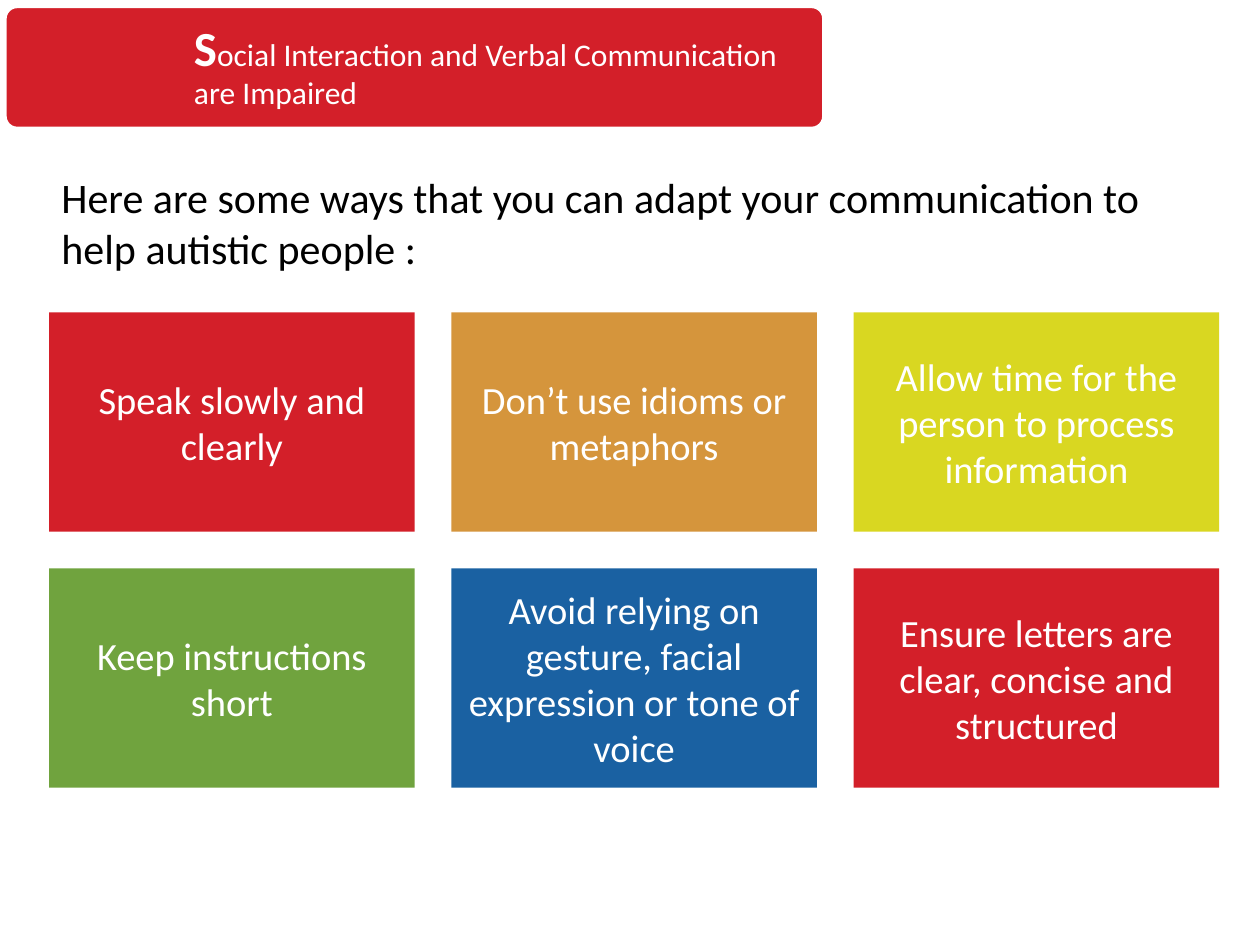
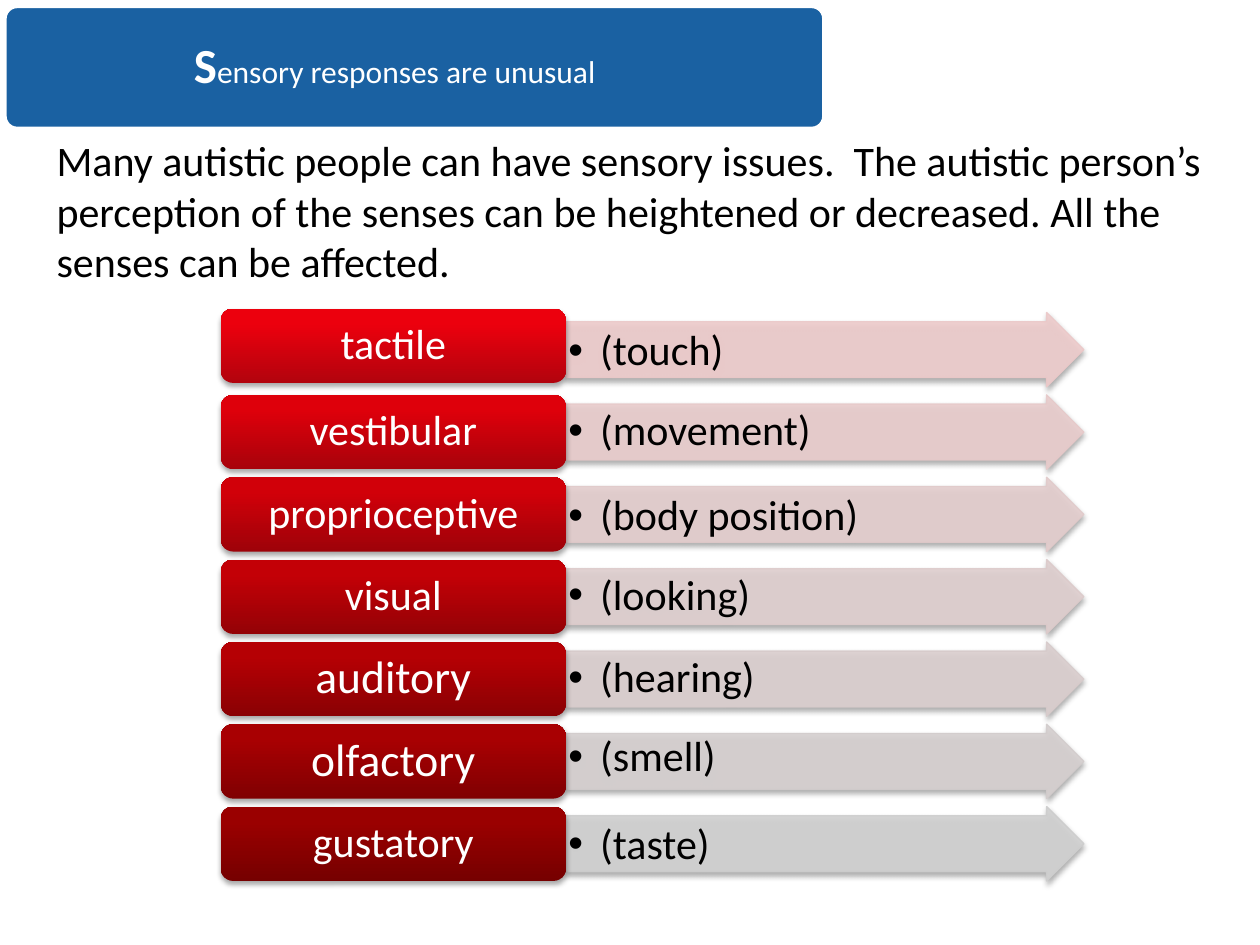
from lxml import etree
from pptx import Presentation
from pptx.dml.color import RGBColor
from pptx.enum.shapes import MSO_SHAPE
from pptx.enum.text import MSO_ANCHOR, MSO_AUTO_SIZE, PP_ALIGN
from pptx.oxml.ns import qn
from pptx.util import Cm, Pt

RECT, ROUND, ARROW = MSO_SHAPE.RECTANGLE, MSO_SHAPE.ROUNDED_RECTANGLE, MSO_SHAPE.RIGHT_ARROW
TOP, MIDDLE = MSO_ANCHOR.TOP, MSO_ANCHOR.MIDDLE
LEFT, CENTER = PP_ALIGN.LEFT, PP_ALIGN.CENTER
NO_FIT = MSO_AUTO_SIZE.NONE

FONT = "Calibri"
WHITE = RGBColor(0xFF, 0xFF, 0xFF)
BLACK = RGBColor(0x00, 0x00, 0x00)
RED = RGBColor(0xD3, 0x1F, 0x29)
ORANGE = RGBColor(0xD5, 0x95, 0x3C)
YELLOW = RGBColor(0xD9, 0xD7, 0x21)
GREEN = RGBColor(0x70, 0xA3, 0x3E)
BLUE = RGBColor(0x1A, 0x61, 0xA2)
LABEL_LOW = RGBColor(0xB2, 0x03, 0x0D), RGBColor(0x76, 0x00, 0x00)
LABEL_HIGH = RGBColor(0xEC, 0x00, 0x0D), RGBColor(0x9A, 0x00, 0x00)
ARROW_FILL = RGBColor(0xEF, 0xCD, 0xCD), RGBColor(0xD2, 0xD2, 0xD2)
ARROW_LINE = RGBColor(0xEB, 0xC8, 0xC8), RGBColor(0xCD, 0xCD, 0xCD)

TIPS = [
    ("Speak slowly and clearly", RED),
    ("Don’t use idioms or metaphors", ORANGE),
    ("Allow time for the person to process information", YELLOW),
    ("Keep instructions short", GREEN),
    ("Avoid relying on gesture, facial expression or tone of voice", BLUE),
    ("Ensure letters are clear, concise and structured", RED),
]
SENSES = [
    ("tactile", 24, "(touch)", 0.16),
    ("vestibular", 24, "(movement)", 0.11),
    ("proprioceptive", 24, "(body position)", 0.16),
    ("visual", 24, "(looking)", 0.11),
    ("auditory", 26, "(hearing)", 0.11),
    ("olfactory", 26, "(smell)", 0.04),
    ("gustatory", 24, "(taste)", 0.14),
]


def blend(ends, t):
    """Return the colour at fraction t between two end colours."""
    return RGBColor(*(round(a + (b - a) * t) for a, b in zip(*ends)))


def add_box(s, kind, box):
    """Add a preset shape without shadow at a box in centimetres."""
    sp = s.shapes.add_shape(kind, *map(Cm, box))
    sp.shadow.inherit = False
    return sp


def set_frame(tf, margins, anchor):
    """Set wrapping, left/top/right/bottom margins and anchor of a text frame."""
    tf.word_wrap = True
    tf.auto_size = NO_FIT
    tf.margin_left, tf.margin_top, tf.margin_right, tf.margin_bottom = map(Cm, margins)
    tf.vertical_anchor = anchor


def add_run(p, text, size, color, bold=False):
    """Append a formatted run to a paragraph."""
    r = p.add_run()
    r.text = text
    r.font.name, r.font.size, r.font.bold = FONT, Pt(size), bold
    r.font.color.rgb = color


def write(sp, text, size, color, align=LEFT, margins=(0.25, 0.13, 0.25, 0.13), anchor=TOP):
    """Write one paragraph into a shape and return the paragraph."""
    set_frame(sp.text_frame, margins, anchor)
    p = sp.text_frame.paragraphs[0]
    p.alignment = align
    add_run(p, text, size, color)
    return p


def set_alpha(sp, percent):
    """Make the fill and line colours of a shape partly transparent."""
    for color in sp.element.spPr.iter(qn("a:srgbClr")):
        etree.SubElement(color, qn("a:alpha"), val=str(percent * 1000))


def add_shadow(sp):
    """Give a shape a soft shadow straight below it."""
    effects = sp.element.spPr.find(qn("a:effectLst"))
    shadow = etree.SubElement(effects, qn("a:outerShdw"), blurRad=str(Pt(3.1)),
                              dist=str(Pt(1.8)), dir="5400000", rotWithShape="0")
    color = etree.SubElement(shadow, qn("a:srgbClr"), val=str(BLACK))
    etree.SubElement(color, qn("a:alpha"), val="35000")


def add_bullet(p, indent):
    """Give a paragraph a round bullet with a hanging indent."""
    pPr = p._p.get_or_add_pPr()
    pPr.set("marL", str(Cm(indent)))
    pPr.set("indent", str(-Cm(indent)))
    etree.SubElement(pPr, qn("a:buFont"), typeface="Arial")
    etree.SubElement(pPr, qn("a:buChar"), char="•")


def add_banner(s, box, color, initial, rest):
    """Draw the title band with an enlarged initial in the title."""
    x, y, w, h = box
    band = add_box(s, ROUND, box)
    band.adjustments[0] = 0.1
    band.fill.solid()
    band.fill.fore_color.rgb = color
    band.line.color.rgb = WHITE
    band.line.width = Pt(2)
    title = s.shapes.title
    title.element.addprevious(band.element)
    title.left, title.top, title.width, title.height = map(Cm, (x + 3.51, y, w - 3.53, h))
    set_frame(title.text_frame, [0.3] * 4, MIDDLE)
    p = title.text_frame.paragraphs[0]
    p.alignment = LEFT
    p.line_spacing = 0.9
    add_run(p, initial, 28, WHITE, True)
    add_run(p, rest, 18, WHITE)


def add_intro(s, box, text):
    """Add the introductory sentence."""
    write(s.shapes.add_textbox(*map(Cm, box)), text, 24, BLACK)


def add_tips(s, box, columns=3, gap=0.74):
    """Lay out the coloured tips as a grid filling the box."""
    x, y, w, h = box
    rows = len(TIPS) // columns
    tile_w = (w - gap * (columns - 1)) / columns
    tile_h = (h - gap * (rows - 1)) / rows
    for i, (text, color) in enumerate(TIPS):
        row, col = divmod(i, columns)
        tile = add_box(s, RECT, (x + col * (tile_w + gap), y + row * (tile_h + gap),
                                 tile_w, tile_h))
        tile.fill.solid()
        tile.fill.fore_color.rgb = color
        tile.line.fill.background()
        write(tile, text, 22, WHITE, CENTER, [0.23] * 4, MIDDLE)


def add_meaning(s, box, text, drop, t):
    """Add the pale arrow that explains a sense."""
    arrow = add_box(s, ARROW, box)
    arrow.adjustments[0] = 0.75
    arrow.fill.solid()
    arrow.fill.fore_color.rgb = blend(ARROW_FILL, t)
    arrow.line.color.rgb = blend(ARROW_LINE, t)
    arrow.line.width = Pt(0.75)
    set_alpha(arrow, 90)
    add_shadow(arrow)
    p = write(arrow, text, 24, BLACK, margins=(0.05, drop, 0.05, 0.05))
    add_bullet(p, 0.64)
    p.line_spacing = 0.9


def add_sense(s, box, text, size, t):
    """Add the red label that names a sense."""
    label = add_box(s, ROUND, box)
    label.fill.gradient()
    label.fill.gradient_angle = 90
    low, high = label.fill.gradient_stops
    low.position, high.position = 0, 0.8
    low.color.rgb = blend(LABEL_LOW, t)
    high.color.rgb = blend(LABEL_HIGH, t)
    label.line.fill.background()
    add_shadow(label)
    p = write(label, text, size, WHITE, CENTER, (0.28, 0.15, 0.28, 0.15), MIDDLE)
    p.line_spacing = 0.9


def add_senses(s, box, row_h=1.5, label_w=6.96):
    """Stack the senses in equal rows from top to bottom of the box."""
    x, y, w, h = box
    last = len(SENSES) - 1
    pitch = (h - row_h) / last
    for i, (sense, size, meaning, drop) in enumerate(SENSES):
        top = y + i * pitch
        lift = 0 if i else 0.08
        add_meaning(s, (x + label_w, top, w - label_w, row_h), meaning, drop, i / last)
        add_sense(s, (x, top - lift, label_w, row_h), sense, size, i / last)


def main():
    """Build both slides and save them."""
    prs = Presentation()
    prs.slide_width, prs.slide_height = Cm(25.4), Cm(19.05)
    layout = prs.slide_layouts.get_by_name("Title Only")
    banner = (0.1, 0.13, 16.51, 2.46)

    s = prs.slides.add_slide(layout)
    add_banner(s, banner, RED, "S", "ocial Interaction and Verbal Communication are Impaired")
    add_intro(s, (0.99, 3.33, 23.6, 2.31),
              "Here are some ways that you can adapt your communication to help autistic people :")
    add_tips(s, (0.99, 6.3, 23.59, 9.58))

    s = prs.slides.add_slide(layout)
    add_banner(s, banner, BLUE, "S", "ensory responses are unusual")
    add_intro(s, (0.89, 2.59, 23.6, 3.33),
              "Many autistic people can have sensory issues.  The autistic person’s perception "
              "of the senses can be heightened or decreased. All the senses can be affected.")
    add_senses(s, (4.45, 6.3, 17.4, 11.46))

    prs.save("out.pptx")


if __name__ == "__main__":
    main()
